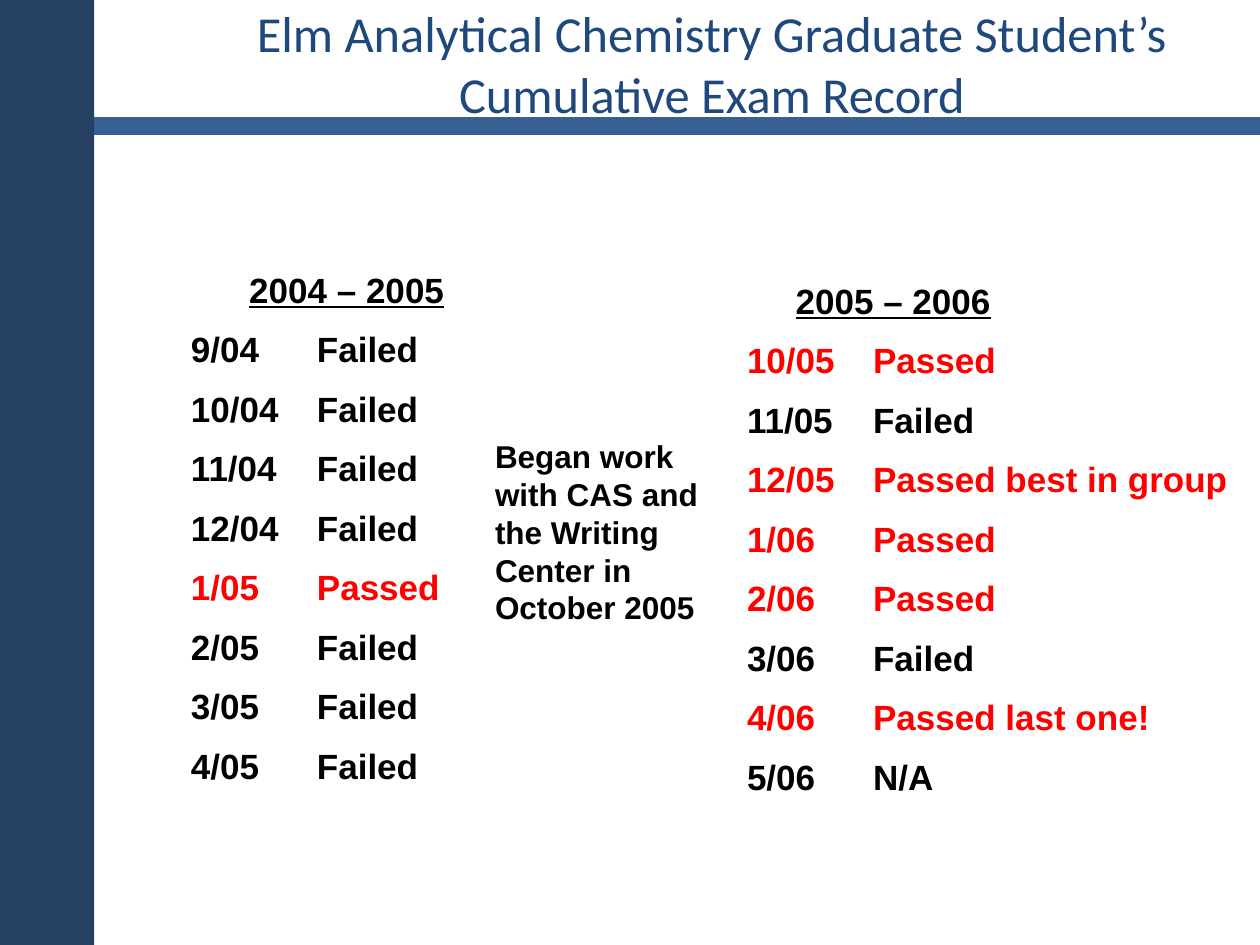
from dataclasses import dataclass

from lxml.etree import SubElement
from pptx import Presentation
from pptx.dml.color import RGBColor
from pptx.enum.shapes import MSO_CONNECTOR, MSO_SHAPE
from pptx.enum.text import MSO_ANCHOR, PP_ALIGN
from pptx.oxml.ns import qn
from pptx.slide import Slide
from pptx.util import Cm, Pt

TITLE_BLUE = RGBColor(0x1F, 0x49, 0x7D)
RULE_BLUE = RGBColor(0x37, 0x60, 0x92)
SIDEBAR_BLUE = RGBColor(0x25, 0x40, 0x61)
BLACK = RGBColor(0, 0, 0)
RED = RGBColor(0xFF, 0, 0)


@dataclass
class Box:
    left: float
    top: float
    width: float
    height: float

    def lengths(self) -> tuple:
        return Cm(self.left), Cm(self.top), Cm(self.width), Cm(self.height)


@dataclass
class ExamYear:
    heading: str
    box: Box
    results: list[tuple[str, str]]
    heading_alignment: PP_ALIGN
    heading_indent: float = 0


EXAM_YEARS = [
    ExamYear("2004 – 2005", Box(3.6, 5.28, 6.78, 12.52), [
        ("9/04", "Failed"), ("10/04", "Failed"), ("11/04", "Failed"),
        ("12/04", "Failed"), ("1/05", "Passed"), ("2/05", "Failed"),
        ("3/05", "Failed"), ("4/05", "Failed"),
    ], PP_ALIGN.CENTER),
    ExamYear("2005 – 2006", Box(14.81, 5.5, 10.59, 12.52), [
        ("10/05", "Passed"), ("11/05", "Failed"),
        ("12/05", "Passed best in group"), ("1/06", "Passed"),
        ("2/06", "Passed"), ("3/06", "Failed"),
        ("4/06", "Passed last one!"), ("5/06", "N/A"),
    ], PP_ALIGN.LEFT, heading_indent=0.98),
]


def add_text(slide: Slide, box: Box, lines: list[str], size: float) -> list:
    """Add a bold text box and return its paragraphs."""
    text_frame = slide.shapes.add_textbox(*box.lengths()).text_frame
    text_frame.word_wrap = True
    text_frame.text = "\n".join(lines)
    for paragraph in text_frame.paragraphs:
        paragraph.space_before = Pt(size / 2)
        font = paragraph.runs[0].font
        font.name, font.size, font.bold = "Arial", Pt(size), True
        font.color.rgb = BLACK
    return list(text_frame.paragraphs)


def add_exam_year(slide: Slide, year: ExamYear) -> None:
    rows = [f"{date}\t{result}" for date, result in year.results]
    heading, *entries = add_text(slide, year.box, [year.heading, *rows], 20)
    heading.runs[0].font.underline = True
    heading.alignment = year.heading_alignment
    heading._p.get_or_add_pPr().set("indent", str(Cm(year.heading_indent)))
    for paragraph, (_, result) in zip(entries, year.results):
        if result.startswith("Passed"):
            paragraph.runs[0].font.color.rgb = RED


def add_title(slide: Slide, text: str, box: Box) -> None:
    title = slide.shapes.title
    title.left, title.top, title.width, title.height = box.lengths()
    text_frame = title.text_frame
    text_frame.text = text
    text_frame.vertical_anchor = MSO_ANCHOR.TOP
    text_frame.margin_top = 0
    paragraph = text_frame.paragraphs[0]
    paragraph.alignment = PP_ALIGN.CENTER
    font = paragraph.runs[0].font
    font.name, font.size = "Calibri", Pt(28.8)
    font.color.rgb = TITLE_BLUE


def add_rule(slide: Slide, top: float, width: float) -> None:
    rule = slide.shapes.add_connector(
        MSO_CONNECTOR.STRAIGHT, 0, Cm(top), Cm(width), Cm(top))
    rule.line.color.rgb = RULE_BLUE
    rule.line.width = Pt(10)
    SubElement(rule._element.spPr, qn("a:effectLst"))


def add_sidebar(slide: Slide, box: Box) -> None:
    sidebar = slide.shapes.add_shape(MSO_SHAPE.RECTANGLE, *box.lengths())
    sidebar.shadow.inherit = False
    sidebar.fill.solid()
    sidebar.fill.fore_color.rgb = SIDEBAR_BLUE
    sidebar.line.fill.background()


def main() -> None:
    presentation = Presentation()
    presentation.slide_width, presentation.slide_height = Cm(25.4), Cm(19.05)
    slide = presentation.slides.add_slide(presentation.slide_layouts[5])

    # Title
    add_title(
        slide,
        "Elm Analytical Chemistry Graduate Student’s Cumulative Exam Record",
        Box(3.56, 0.05, 21.59, 3.6))

    # Exam results and the turning point between them
    for year in EXAM_YEARS:
        add_exam_year(slide, year)
    add_text(
        slide, Box(9.73, 8.69, 4.65, 4.11),
        ["Began work with CAS and the Writing Center in October 2005"], 18)

    # Rule under the title and sidebar
    add_rule(slide, 2.54, 25.4)
    add_sidebar(slide, Box(0, 0, 1.9, 19.05))

    presentation.save("out.pptx")


if __name__ == "__main__":
    main()
